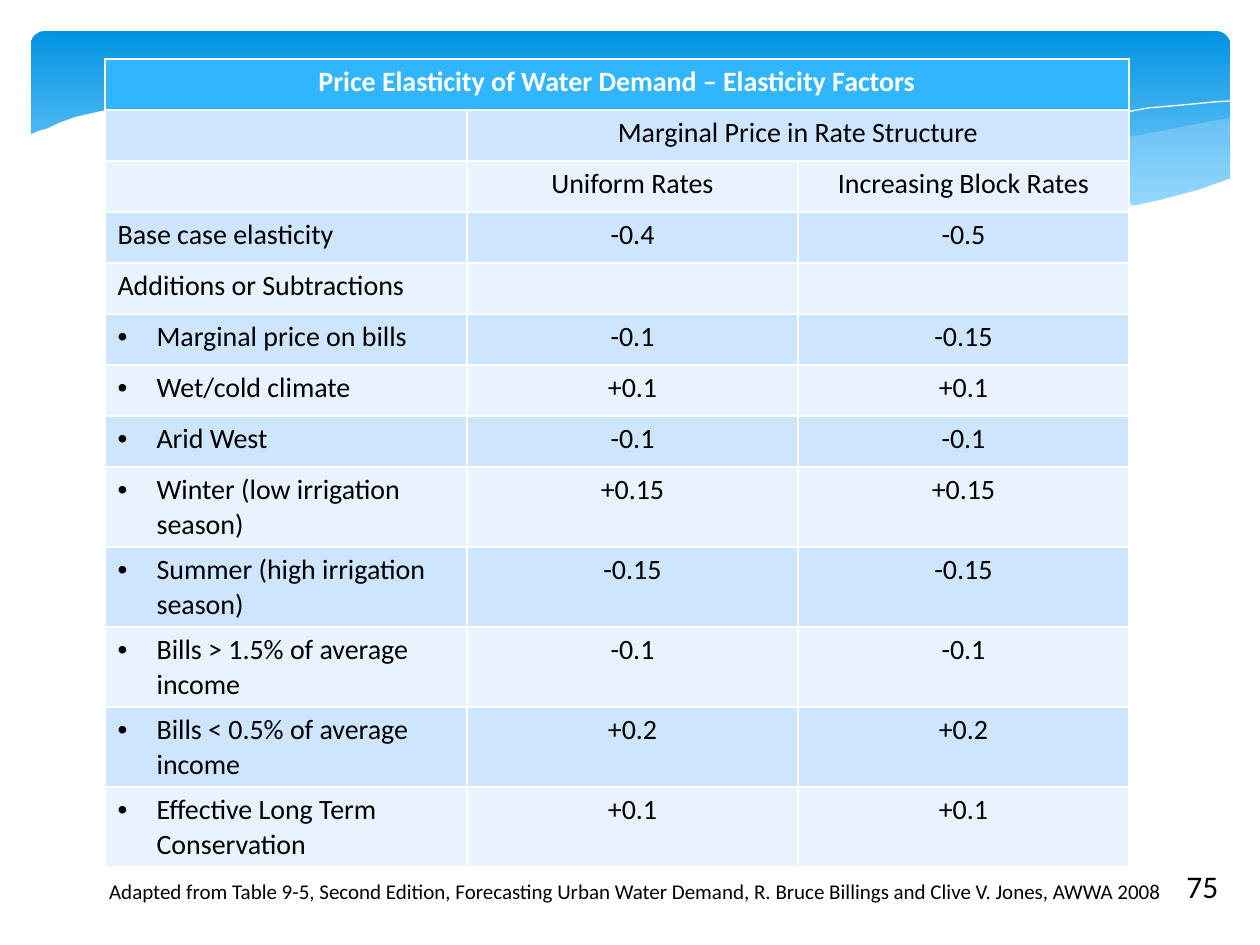
from lxml.etree import SubElement
from pptx import Presentation
from pptx.dml.color import RGBColor
from pptx.enum.shapes import MSO_SHAPE
from pptx.enum.text import PP_ALIGN
from pptx.oxml.ns import qn
from pptx.util import Pt

PX = 914400 / 126
FONT = "Calibri"
WHITE = RGBColor(0xFF, 0xFF, 0xFF)
BLACK = RGBColor(0x00, 0x00, 0x00)
SKY_TOP = RGBColor(0x02, 0x93, 0xE0)
SKY_BOTTOM = RGBColor(0x83, 0xD3, 0xFE)
MIST = RGBColor(0xC6, 0xE7, 0xFC)
HEADER = RGBColor(0x31, 0xB6, 0xFD)
BANDS = (RGBColor(0xE8, 0xF3, 0xFF), RGBColor(0xCE, 0xE5, 0xFE))

NEAR_SWELL = [
    (1199, 87), (1182, 90), (1130, 100), (1093, 107), (1055, 118), (984, 134),
    (889, 154), (803, 171), (858, 177), (924, 183), (982, 186), (1022, 186),
    (1080, 179), (1130, 171), (1157, 163), (1183, 154), (1200, 147), (1200, 87)]
FAR_SWELL = [
    (330, 77), (377, 82), (453, 96), (536, 115), (638, 139), (727, 158),
    (808, 172), (880, 181), (959, 186), (1026, 186), (1095, 179), (1024, 169),
    (947, 157), (860, 138), (763, 115), (669, 95), (586, 81), (499, 72),
    (425, 70), (364, 72)]
FALLING_LINE = [
    (359, 82), (392, 76), (458, 72), (537, 72), (613, 77), (703, 87),
    (808, 105), (928, 130), (1017, 152), (1113, 178)]
RISING_LINE = [
    (742, 159), (793, 147), (877, 125), (948, 109), (1023, 94), (1080, 84),
    (1117, 77), (1152, 74), (1183, 71), (1199, 70)]
FOREGROUND = [
    (1201, 147), (1167, 159), (1129, 169), (1088, 178), (1041, 183),
    (989, 184), (929, 183), (862, 177), (786, 166), (700, 150), (604, 130),
    (533, 113), (463, 97), (398, 85), (338, 76), (285, 71), (236, 67),
    (193, 67), (154, 69), (120, 72), (90, 76), (66, 81), (44, 86), (28, 92),
    (15, 98), (7, 100), (-1, 104), (-1, 251), (1201, 251)]

COLUMN_WIDTHS = (362, 331, 331)
ROW_HEIGHT, WRAPPED_ROW_HEIGHT = 51, 80
WRAPPED_ROWS_START = 8
BULLETS_START = 5
ELASTICITIES = [
    ("Price Elasticity of Water Demand – Elasticity Factors", "", ""),
    ("", "Marginal Price in Rate Structure", ""),
    ("", "Uniform Rates", "Increasing Block Rates"),
    ("Base case elasticity", "-0.4", "-0.5"),
    ("Additions or Subtractions", "", ""),
    ("Marginal price on bills", "-0.1", "-0.15"),
    ("Wet/cold climate", "+0.1", "+0.1"),
    ("Arid West", "-0.1", "-0.1"),
    ("Winter (low irrigation season)", "+0.15", "+0.15"),
    ("Summer (high irrigation season)", "-0.15", "-0.15"),
    ("Bills > 1.5% of average income", "-0.1", "-0.1"),
    ("Bills < 0.5% of average income", "+0.2", "+0.2"),
    ("Effective Long Term Conservation", "+0.1", "+0.1"),
]


def px(length):
    """Turn px into EMU."""
    return round(length * PX)


def style(paragraph, size, color=BLACK, align=PP_ALIGN.LEFT, bold=False):
    """Format a whole paragraph."""
    paragraph.alignment = align
    font = paragraph.font
    font.name, font.size, font.bold = FONT, Pt(size), bold
    font.color.rgb = color


def add_outline(slide, left, top, points, close):
    """Draw a shadowless freeform from points relative to left and top."""
    placed = [(left + x, top + y) for x, y in points]
    builder = slide.shapes.build_freeform(*placed[0], scale=PX)
    builder.add_line_segments(placed[1:], close=close)
    outline = builder.convert_to_shape()
    outline.shadow.inherit = False
    return outline


def add_wave(slide, left, top, points, color, opacity=100):
    """Add a filled wave."""
    wave = add_outline(slide, left, top, points, True)
    wave.fill.solid()
    wave.fill.fore_color.rgb = color
    wave.line.fill.background()
    if opacity < 100:
        tint = wave.fill._xPr.find(qn("a:solidFill"))[0]
        SubElement(tint, qn("a:alpha"), val=str(opacity * 1000))


def add_crest(slide, left, top, points):
    """Add a white hairline along a wave."""
    crest = add_outline(slide, left, top, points, False)
    crest.fill.background()
    crest.line.color.rgb = WHITE
    crest.line.width = 0


def add_banner(slide, left, top, width, height):
    """Add the gradient sky with its waves."""
    sky = slide.shapes.add_shape(
        MSO_SHAPE.ROUNDED_RECTANGLE, px(left), px(top), px(width), px(height))
    sky.adjustments[0] = 0.07
    sky.shadow.inherit = False
    sky.line.fill.background()
    sky.fill.gradient()
    sky.fill.gradient_angle = 270
    stops = zip(sky.fill.gradient_stops, (0, 0.9), (SKY_TOP, SKY_BOTTOM))
    for stop, position, color in stops:
        stop.position = position
        stop.color.rgb = color
    add_wave(slide, left, top, NEAR_SWELL, MIST, 29)
    add_wave(slide, left, top, FAR_SWELL, MIST, 40)
    add_crest(slide, left, top, FALLING_LINE)
    add_crest(slide, left, top, RISING_LINE)
    add_wave(slide, left, top, FOREGROUND, WHITE)


def add_bullet(paragraph):
    """Give a paragraph a hanging bullet."""
    properties = paragraph._p.get_or_add_pPr()
    properties.set("marL", str(px(39)))
    properties.set("indent", str(-px(39)))
    SubElement(properties, qn("a:buFont"), typeface="Arial")
    SubElement(properties, qn("a:buChar"), char="•")


def add_elasticity_table(slide, left, top):
    """Add the table of elasticity factors."""
    heights = [WRAPPED_ROW_HEIGHT if row >= WRAPPED_ROWS_START else ROW_HEIGHT
               for row in range(len(ELASTICITIES))]
    table = slide.shapes.add_table(
        len(heights), len(COLUMN_WIDTHS), px(left), px(top),
        px(sum(COLUMN_WIDTHS)), px(sum(heights))).table
    for column, width in zip(table.columns, COLUMN_WIDTHS):
        column.width = px(width)
    for row, (height, texts) in enumerate(zip(heights, ELASTICITIES)):
        table.rows[row].height = px(height)
        for column, text in enumerate(texts):
            cell = table.cell(row, column)
            cell.fill.solid()
            cell.fill.fore_color.rgb = BANDS[row % 2] if row else HEADER
            cell.text = text
            paragraph = cell.text_frame.paragraphs[0]
            if column == 0 and row >= BULLETS_START:
                add_bullet(paragraph)
            centred = row == 0 or column > 0
            style(paragraph, 16, BLACK if row else WHITE,
                  PP_ALIGN.CENTER if centred else PP_ALIGN.LEFT, row == 0)
    table.cell(0, 0).merge(table.cell(0, 2))
    table.cell(1, 1).merge(table.cell(1, 2))


def add_caption(slide, left, top, width, height, text, size, align, wrap):
    """Add one line of text."""
    caption = slide.shapes.add_textbox(
        px(left), px(top), px(width), px(height)).text_frame
    caption.word_wrap = wrap
    caption.text = text
    style(caption.paragraphs[0], size, align=align)


def main():
    """Build and save the slide."""
    deck = Presentation()
    deck.slide_width, deck.slide_height = px(1260), px(945)
    slide = deck.slides.add_slide(deck.slide_layouts[6])
    add_banner(slide, 31, 31, 1199, 197)
    add_caption(slide, 1174, 861, 58, 50, "75", 18, PP_ALIGN.LEFT, False)
    add_elasticity_table(slide, 105, 59)
    add_caption(
        slide, 53, 872, 1165, 38,
        "Adapted from Table 9-5, Second Edition, Forecasting Urban Water "
        "Demand, R. Bruce Billings and Clive V. Jones, AWWA 2008",
        12, PP_ALIGN.CENTER, True)
    deck.save("out.pptx")


if __name__ == "__main__":
    main()
